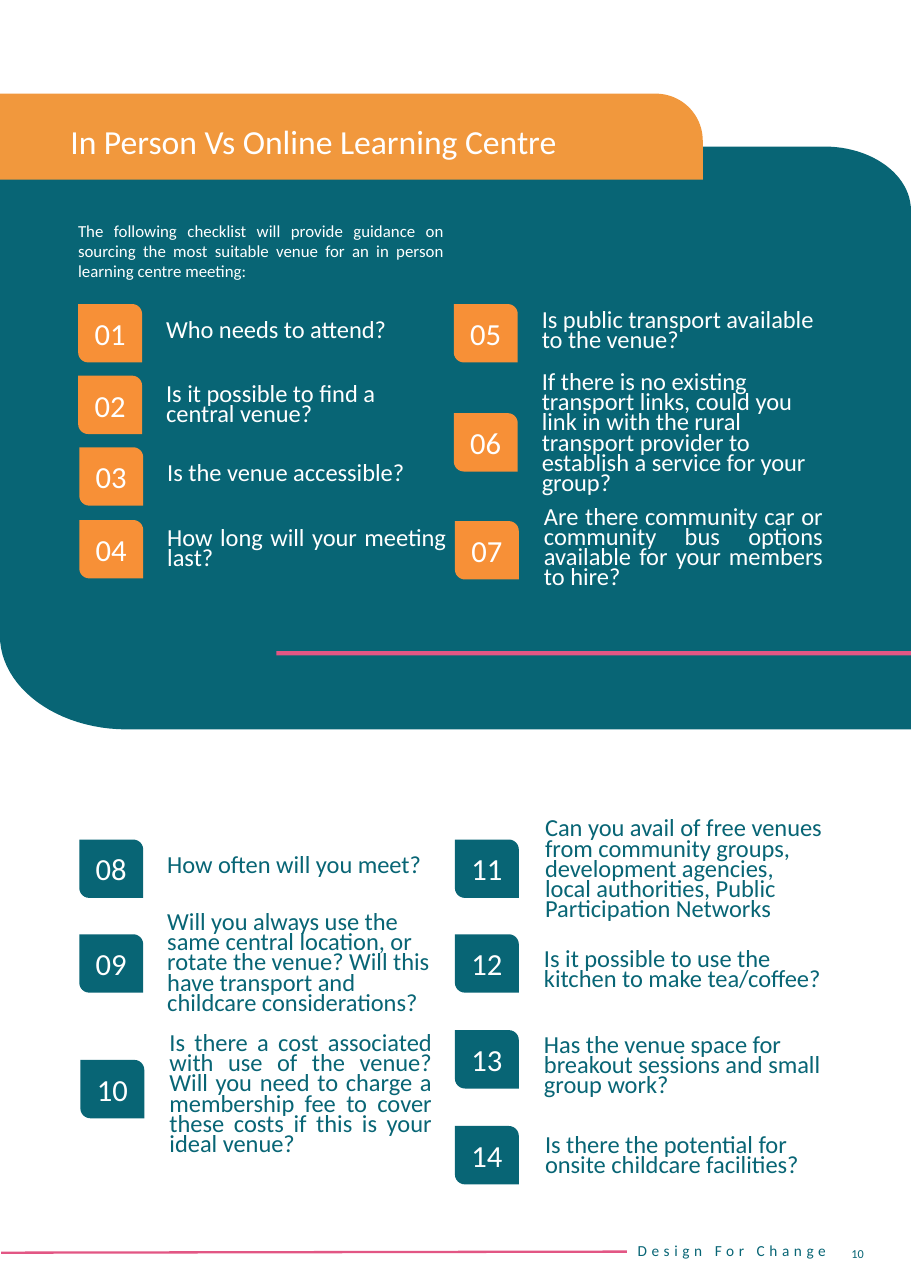
from dataclasses import dataclass

from lxml.etree import SubElement
from pptx import Presentation
from pptx.dml.color import RGBColor
from pptx.enum.shapes import MSO_CONNECTOR, MSO_SHAPE
from pptx.enum.text import MSO_ANCHOR, PP_ALIGN
from pptx.oxml.ns import qn
from pptx.util import Inches, Pt

TEAL = RGBColor(0x08, 0x65, 0x75)
PINK = RGBColor(0xE2, 0x56, 0x84)
AMBER = RGBColor(0xF1, 0x98, 0x3D)
ORANGE = RGBColor(0xF7, 0x90, 0x37)
WHITE = RGBColor(0xFF, 0xFF, 0xFF)
FONT = "Calibri"
LAST_ON_PANEL = 7
CURVE_STEPS = 24

Point = tuple[float, float]


@dataclass(frozen=True)
class Question:
    left: float
    top: float
    text_left: float
    text_top: float
    text: str
    align: PP_ALIGN = PP_ALIGN.LEFT
    width: float = 2.73


QUESTIONS = [
    Question(0.71, 2.76, 1.41, 2.76, "Who needs to attend?"),
    Question(0.71, 3.41, 1.41, 3.43, "Is it possible to find a central venue?"),
    Question(0.72, 4.06, 1.42, 4.06, "Is the venue accessible?", PP_ALIGN.JUSTIFY),
    Question(0.72, 4.72, 1.42, 4.74, "How long will your meeting last?", PP_ALIGN.JUSTIFY),
    Question(4.12, 2.76, 4.82, 2.76, "Is public transport available to the venue?"),
    Question(4.12, 3.75, 4.82, 3.69,
             "If there is no existing transport links, could you link in with the rural "
             "transport provider to establish a service for your group?"),
    Question(4.13, 4.73, 4.84, 4.73,
             "Are there community car or community bus options available for your "
             "members to hire?", PP_ALIGN.JUSTIFY),
    Question(0.72, 7.62, 1.42, 7.62, "How often will you meet?"),
    Question(0.72, 8.48, 1.42, 8.5,
             "Will you always use the same central location, or rotate the venue? Will "
             "this have transport and childcare considerations?"),
    Question(0.73, 9.62, 1.44, 9.69,
             "Is there a cost associated with use of the venue? Will you need to charge a "
             "membership fee to cover these costs if this is your ideal venue?",
             PP_ALIGN.JUSTIFY, 2.58),
    Question(4.13, 7.62, 4.85, 7.65,
             "Can you avail of free venues from community groups, development agencies, "
             "local authorities, Public Participation Networks"),
    Question(4.13, 8.48, 4.84, 8.56, "Is it possible to use the kitchen to make tea/coffee?"),
    Question(4.13, 9.35, 4.84, 9.43,
             "Has the venue space for breakout sessions and small group work?"),
    Question(4.13, 10.22, 4.85, 10.25, "Is there the potential for onsite childcare facilities?"),
]


def curve(a: Point, b: Point, c: Point, d: Point) -> list[Point]:
    points = []
    for i in range(CURVE_STEPS + 1):
        t = i / CURVE_STEPS
        u = 1 - t
        weights = (u ** 3, 3 * u * u * t, 3 * u * t * t, t ** 3)
        points.append((sum(w * q[0] for w, q in zip(weights, (a, b, c, d))),
                       sum(w * q[1] for w, q in zip(weights, (a, b, c, d)))))
    return points


def paint(sp, color: RGBColor) -> None:
    sp.shadow.inherit = False
    sp.fill.solid()
    sp.fill.fore_color.rgb = color
    sp.line.fill.background()


def add_outline(s, points: list[Point], color: RGBColor) -> None:
    scaled = [(Inches(x), Inches(y)) for x, y in points]
    builder = s.shapes.build_freeform(*scaled[0], scale=1.0)
    builder.add_line_segments(scaled[1:], close=True)
    paint(builder.convert_to_shape(), color)


def write(sp, text: str, size: float, color: RGBColor, align: PP_ALIGN = PP_ALIGN.LEFT,
          anchor: MSO_ANCHOR = MSO_ANCHOR.MIDDLE, before: float = 0,
          leading: float | None = None, tracking: float = 0) -> None:
    tf = sp.text_frame
    tf.word_wrap = True
    tf.vertical_anchor = anchor
    p = tf.paragraphs[0]
    p.alignment = align
    p.space_before = Pt(before)
    if leading:
        p.line_spacing = Pt(leading)
    r = p.add_run()
    r.text = text
    r.font.name = FONT
    r.font.size = Pt(size)
    r.font.color.rgb = color
    if tracking:
        r._r.get_or_add_rPr().set("spc", str(int(tracking * 100)))


def add_text(s, left: float, top: float, width: float, height: float):
    return s.shapes.add_textbox(Inches(left), Inches(top), Inches(width), Inches(height))


def add_question(s, number: int, q: Question) -> None:
    on_panel = number <= LAST_ON_PANEL
    badge = s.shapes.add_shape(MSO_SHAPE.ROUND_2_DIAG_RECTANGLE, Inches(q.left),
                               Inches(q.top), Inches(0.58), Inches(0.53))
    badge.adjustments[0] = 0
    badge.adjustments[1] = 0.17
    paint(badge, ORANGE if on_panel else TEAL)
    write(badge, f"{number:02d}", 20, WHITE, PP_ALIGN.CENTER, before=22.7)
    write(add_text(s, q.text_left, q.text_top, q.width, 0.53), q.text, 16,
          WHITE if on_panel else TEAL, q.align, before=6, leading=13.2)


def add_footer(s) -> None:
    write(add_text(s, 5.69, 11.15, 2.01, 0.4), "Design For Change", 10, TEAL, tracking=3)
    rule = s.shapes.add_connector(MSO_CONNECTOR.STRAIGHT, Inches(0.01), Inches(11.37),
                                  Inches(5.69), Inches(11.36))
    rule.line.color.rgb = PINK
    rule.line.width = Pt(1.5)
    SubElement(rule._element.spPr, qn("a:effectLst"))
    write(add_text(s, 6.86, 11.12, 1.08, 0.51), "10", 8, TEAL, PP_ALIGN.RIGHT)


def add_panel(s) -> None:
    add_outline(s, [
        (8.27, 6.62),
        *curve((1.15, 6.62), (0.52, 6.62), (0, 6.24), (0, 5.77)),
        (0, 1.33),
        *curve((7.48, 1.33), (7.92, 1.33), (8.27, 1.59), (8.27, 1.91)),
    ], TEAL)
    bar = s.shapes.add_shape(MSO_SHAPE.RECTANGLE, Inches(2.51), Inches(5.91),
                             Inches(5.76), Inches(0.04))
    paint(bar, PINK)
    add_outline(s, [
        (0, 0.85),
        *curve((5.95, 0.85), (6.19, 0.85), (6.38, 1.04), (6.38, 1.28)),
        (6.38, 1.63),
        (0, 1.63),
    ], AMBER)


def main() -> None:
    prs = Presentation()
    prs.slide_width = Inches(8.27)
    prs.slide_height = Inches(11.69)
    s = prs.slides.add_slide(prs.slide_layouts[6])
    add_footer(s)
    add_panel(s)
    write(add_text(s, 0.61, 1.95, 3.52, 0.71),
          "The following checklist will provide guidance on sourcing the most suitable "
          "venue for an in person learning centre meeting:",
          11, WHITE, PP_ALIGN.JUSTIFY, MSO_ANCHOR.TOP)
    write(add_text(s, 0.54, 1.05, 7.19, 0.86), "In Person Vs Online Learning Centre",
          22, WHITE, anchor=MSO_ANCHOR.TOP, before=22.7)
    for number, q in enumerate(QUESTIONS, 1):
        add_question(s, number, q)
    prs.save("out.pptx")


if __name__ == "__main__":
    main()
